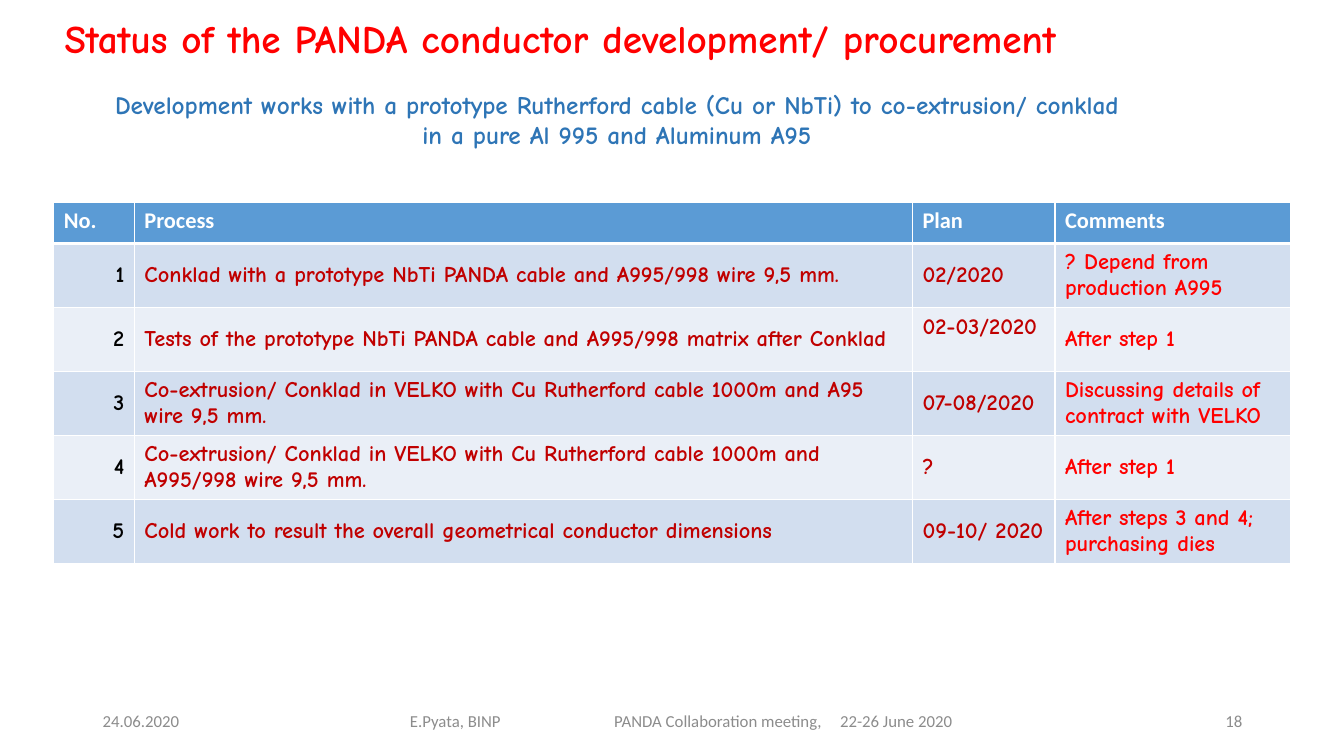
from lxml.etree import SubElement
from pptx import Presentation
from pptx.dml.color import RGBColor
from pptx.enum.text import MSO_ANCHOR as Anchor, MSO_AUTO_SIZE as AutoSize, PP_ALIGN as Align
from pptx.oxml.ns import qn
from pptx.util import Inches, Pt

WIDTH, HEIGHT = 13.33, 7.5
WHITE = RGBColor(0xFF, 0xFF, 0xFF)
BLACK = RGBColor(0x00, 0x00, 0x00)
RED = RGBColor(0xFF, 0x00, 0x00)
DARK_RED = RGBColor(0xC0, 0x00, 0x00)
BLUE = RGBColor(0x2E, 0x75, 0xB6)
HEADER_BLUE = RGBColor(0x5B, 0x9B, 0xD5)
BANDS = [RGBColor(0xD2, 0xDE, 0xEF), RGBColor(0xEA, 0xEF, 0xF7)]
GRAY = RGBColor(0x8C, 0x8C, 0x8C)
HAND, PLAIN = "Comic Neue", "Calibri"

HEADINGS = ["No.", "Process", "Plan", "Comments"]
STEPS = [
    ("Conklad with a prototype NbTi PANDA cable and A995/998 wire 9,5 mm.",
     "02/2020", "? Depend from production A995"),
    ("Tests of the prototype NbTi PANDA cable and A995/998 matrix after Conklad",
     "02-03/2020", "After step 1"),
    ("Co-extrusion/ Conklad in VELKO with Cu Rutherford cable 1000m and A95 wire 9,5 mm.",
     "07-08/2020", "Discussing details of contract with VELKO"),
    ("Co-extrusion/ Conklad in VELKO with Cu Rutherford cable 1000m and A995/998 wire 9,5 mm.",
     "?", "After step 1"),
    ("Cold work to result the overall geometrical conductor dimensions",
     "09-10/ 2020", "After steps 3 and 4; purchasing dies"),
]
COLUMN_SHARES = [6, 57.9, 10.6, 17.5]
HEADER_SHARE, STEP_SHARE = 5.4, 8.47
RAISED_PLAN = (2, 2)


def across(percent):
    return Inches(WIDTH * percent / 100)


def down(percent):
    return Inches(HEIGHT * percent / 100)


def area(left, top, width, height):
    return across(left), down(top), across(width), down(height)


def write(frame, text, size=16, font=HAND, color=BLACK, bold=True,
          align=Align.LEFT, anchor=Anchor.TOP, tabs=()):
    frame.word_wrap = True
    frame.vertical_anchor = anchor
    para = frame.paragraphs[0]
    para.alignment = align
    if tabs:
        tab_list = SubElement(para._p.get_or_add_pPr(), qn("a:tabLst"))
        for stop in tabs:
            SubElement(tab_list, qn("a:tab"), pos=str(across(stop)), algn="l")
    for index, part in enumerate(text.split("\t")):
        span = para.add_run()
        span.text = "\t" + part if index else part
        span.font.size = Pt(size)
        span.font.name = font
        span.font.bold = bold
        span.font.color.rgb = color


def add_label(page, place, text, **style):
    box = page.shapes.add_textbox(*place)
    write(box.text_frame, text, **style)
    return box


def add_title(page, text):
    title = page.shapes.title
    title.left, title.top, title.width, title.height = area(4.05, 1.2, 92, 7.6)
    title.text_frame.auto_size = AutoSize.NONE
    write(title.text_frame, text, size=28, color=RED)


def add_footer(page):
    style = dict(size=12, font=PLAIN, color=GRAY, bold=False, anchor=Anchor.MIDDLE)
    top, height = 92.67, 5.33
    add_label(page, area(6.9, top, 22.5, height), "24.06.2020", **style)
    meeting = add_label(page, area(20, top, 61.7, height),
                        "E.Pyata, BINP\tPANDA Collaboration meeting,\t22-26 June 2020",
                        tabs=(15.2, 32), **style)
    meeting.text_frame.margin_left = across(10.5)
    add_label(page, area(70.67, top, 22.5, height), "18", align=Align.RIGHT, **style)


def paint_cell(cell, fill, top=1, bottom=1):
    properties = cell._tc.get_or_add_tcPr()
    for side, points in (("L", 1), ("R", 1), ("T", top), ("B", bottom)):
        line = SubElement(properties, qn(f"a:ln{side}"), w=str(Pt(points)))
        SubElement(SubElement(line, qn("a:solidFill")), qn("a:srgbClr"), val=str(WHITE))
    cell.fill.solid()
    cell.fill.fore_color.rgb = fill


def write_cell(cell, text, anchor=Anchor.MIDDLE, **style):
    write(cell.text_frame, text, **style)
    cell.vertical_anchor = anchor


def add_steps(page):
    height = HEADER_SHARE + STEP_SHARE * len(STEPS)
    table = page.shapes.add_table(len(STEPS) + 1, len(HEADINGS),
                                  *area(4, 26.8, sum(COLUMN_SHARES), height)).table
    for column, share in zip(table.columns, COLUMN_SHARES):
        column.width = across(share)
    for index, row in enumerate(table.rows):
        row.height = down(STEP_SHARE if index else HEADER_SHARE)
    for column, heading in enumerate(HEADINGS):
        cell = table.cell(0, column)
        paint_cell(cell, HEADER_BLUE, bottom=3)
        write_cell(cell, heading, anchor=Anchor.TOP, font=PLAIN, color=WHITE)
    colors = [BLACK, DARK_RED, DARK_RED, RED]
    for number, step in enumerate(STEPS, 1):
        for column, text in enumerate((str(number), *step)):
            cell = table.cell(number, column)
            paint_cell(cell, BANDS[(number - 1) % 2], top=3 if number == 1 else 1)
            write_cell(cell, text, color=colors[column],
                       align=Align.LEFT if column else Align.RIGHT)
    table.cell(*RAISED_PLAN).margin_bottom = Inches(0.3)


def main():
    deck = Presentation()
    deck.slide_width, deck.slide_height = Inches(WIDTH), Inches(HEIGHT)
    page = deck.slides.add_slide(deck.slide_layouts[5])
    add_footer(page)
    add_label(page, area(6.9, 11.1, 78, 13.5),
              "Development works with a prototype Rutherford cable (Cu or NbTi) "
              "to co-extrusion/ conklad in a pure Al 995 and Aluminum A95",
              size=18, color=BLUE, align=Align.CENTER)
    add_title(page, "Status of the PANDA conductor development/ procurement")
    add_steps(page)
    deck.save("out.pptx")


if __name__ == "__main__":
    main()
